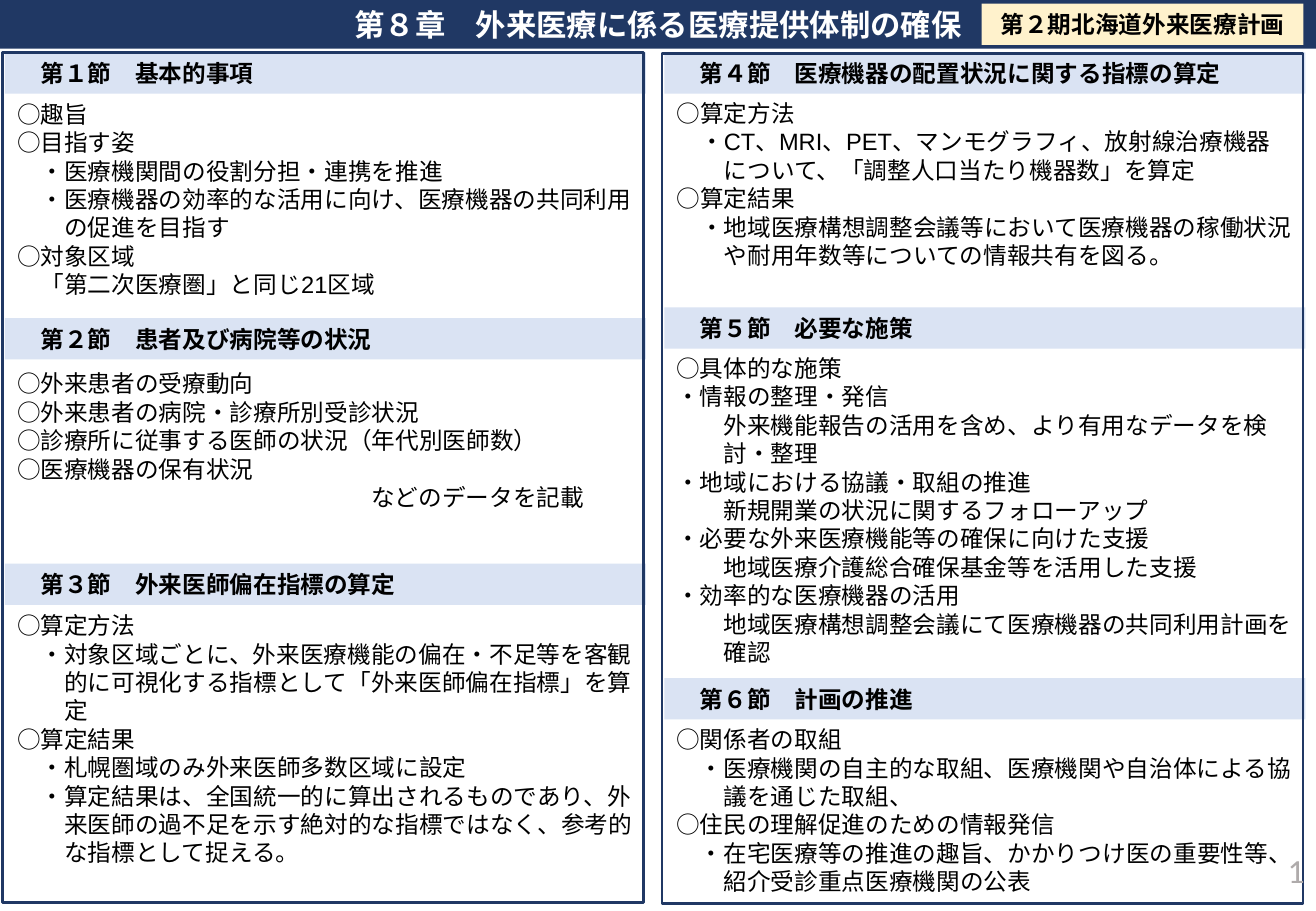
from dataclasses import dataclass

from lxml import etree
from pptx import Presentation
from pptx.dml.color import RGBColor
from pptx.enum.shapes import MSO_SHAPE
from pptx.enum.text import MSO_ANCHOR, MSO_AUTO_SIZE, PP_ALIGN
from pptx.oxml.ns import qn
from pptx.util import Pt

RECTANGLE = MSO_SHAPE.RECTANGLE
TOP, MIDDLE = MSO_ANCHOR.TOP, MSO_ANCHOR.MIDDLE
LEFT, CENTER, RIGHT = PP_ALIGN.LEFT, PP_ALIGN.CENTER, PP_ALIGN.RIGHT
NO_AUTOFIT = MSO_AUTO_SIZE.NONE
COMPARISON_LAYOUT = 4


@dataclass(frozen=True)
class Theme:
    navy: RGBColor = RGBColor(0x20, 0x38, 0x64)
    pale_blue: RGBColor = RGBColor(0xDA, 0xE3, 0xF3)
    cream: RGBColor = RGBColor(0xFF, 0xF2, 0xCC)
    white: RGBColor = RGBColor(0xFF, 0xFF, 0xFF)
    black: RGBColor = RGBColor(0, 0, 0)
    gray: RGBColor = RGBColor(0xAF, 0xAB, 0xAB)
    fonts: tuple = ("Calibri", "Arial")
    title_size: int = 18
    body_size: int = 14
    number_size: int = 20
    line_spacing: float = 16.85


THEME = Theme()
EM = THEME.body_size
COLUMN_WIDTH = 380
HEADING_HEIGHT = 24.5

# Each section: heading, heading top, list top, list height, lines.
# Each line: indent in characters, text; "|" switches between the two fonts.
COLUMNS = [
    (2.9, 1.4, 31, [
        ("第１節　基本的事項", 31, 55.4, 126, [
            (0, "|○趣旨"),
            (0, "|○目指す姿"),
            (1, "|・医療機関間の役割分担・連携を推進"),
            (1, "|・医療機器の効率的な活用に向け、医療機器の共同利用"),
            (2, "|の促進を目指す"),
            (0, "○対象区域"),
            (1, "「第二次医療圏」と同じ|21|区域"),
        ]),
        ("第２節　患者及び病院等の状況", 188.6, 215.3, 109, [
            (0, "○外来患者の受療動向"),
            (0, "○外来患者の病院・診療所別受診状況"),
            (0, "○診療所に従事する医師の状況（年代別医師数）"),
            (0, "○医療機器の保有状況"),
            (15, "などのデータを記載"),
        ]),
        ("第３節　外来医師偏在指標の算定", 334.1, 358.6, 177, [
            (0, "○算定方法"),
            (1, "・対象区域ごとに、外来医療機能の偏在・不足等を客観"),
            (2, "的に可視化する指標として「外来医師偏在指標」を算"),
            (2, "定"),
            (0, "○算定結果"),
            (1, "・札幌圏域のみ外来医師多数区域に設定"),
            (1, "・算定結果は、全国統一的に算出されるものであり、外"),
            (2, "来医師の過不足を示す絶対的な指標ではなく、参考的"),
            (2, "な指標として捉える。"),
        ]),
    ]),
    (393.8, 392.4, 31.7, [
        ("第４節　医療機器の配置状況に関する指標の算定", 31, 55, 124, [
            (0, "○算定方法"),
            (1, "|・CT、MRI、PET、|マンモグラフィ、放射線治療機器"),
            (2, "について、「調整人口当たり機器数」を算定"),
            (0, "○算定結果"),
            (1, "・地域医療構想調整会議等において医療機器の稼働状況"),
            (2, "や耐用年数等についての情報共有を図る。"),
        ]),
        ("第５節　必要な施策", 182.2, 206.2, 194, [
            (0, "○具体的な施策"),
            (0, "・情報の整理・発信"),
            (2, "外来機能報告の活用を含め、より有用なデータを検"),
            (2, "討・整理"),
            (0, "・地域における協議・取組の推進"),
            (2, "新規開業の状況に関するフォローアップ"),
            (0, "・必要な外来医療機能等の確保に向けた支援"),
            (2, "地域医療介護総合確保基金等を活用した支援"),
            (0, "・効率的な医療機器の活用"),
            (2, "地域医療構想調整会議にて医療機器の共同利用計画を"),
            (2, "確認"),
        ]),
        ("第６節　計画の推進", 402, 426.2, 109, [
            (0, "○関係者の取組"),
            (1, "・医療機関の自主的な取組、医療機関や自治体による協"),
            (2, "議を通じた取組、"),
            (0, "○住民の理解促進のための情報発信"),
            (1, "・在宅医療等の推進の趣旨、かかりつけ医の重要性等、"),
            (2, "紹介受診重点医療機関の公表"),
        ]),
    ]),
]


def place(shape, left, top, width, height, fill=None):
    """Set the shape's bounds and fill, without outline or shadow."""
    shape.left, shape.top = Pt(left), Pt(top)
    shape.width, shape.height = Pt(width), Pt(height)
    if fill is None:
        shape.fill.background()
    else:
        shape.fill.solid()
        shape.fill.fore_color.rgb = fill
    shape.line.fill.background()
    shape.shadow.inherit = False


def write(shape, lines, size=THEME.body_size, color=THEME.black, bold=False,
          align=LEFT, anchor=MIDDLE, spacing=1.0):
    """Fill the shape with (indent, text) lines, one paragraph each."""
    frame = shape.text_frame
    frame.word_wrap = True
    frame.auto_size = NO_AUTOFIT
    frame.vertical_anchor = anchor
    frame.margin_top = frame.margin_bottom = Pt(3.6 if anchor == TOP else 0)
    if align == LEFT:
        frame.margin_right = Pt(0)
    for index, (indent, text) in enumerate(lines):
        paragraph = frame.add_paragraph() if index else frame.paragraphs[0]
        paragraph.alignment = align
        paragraph.line_spacing = spacing
        paragraph.space_before = paragraph.space_after = Pt(0)
        properties = paragraph._p.get_or_add_pPr()
        properties.set("marL", str(Pt(indent * EM)))
        properties.set("indent", "0")
        etree.SubElement(properties, qn("a:buNone"))
        for part, segment in enumerate(text.split("|")):
            if segment:
                run = paragraph.add_run()
                run.text = segment
                run.font.name = THEME.fonts[part % 2]
                run.font.size = Pt(size)
                run.font.bold = bold
                run.font.color.rgb = color


presentation = Presentation()
presentation.slide_width, presentation.slide_height = Pt(780), Pt(540)
slide = presentation.slides.add_slide(
    presentation.slide_layouts[COMPARISON_LAYOUT])
shapes = slide.shapes

title = shapes.title
place(title, 0, 0, 780, 28.8, THEME.navy)
write(title, [(0, "第８章　外来医療に係る医療提供体制の確保")],
      THEME.title_size, THEME.white, bold=True, align=CENTER)

# The layout offers four body placeholders; further lists use text boxes.
list_placeholders = [shape for shape in slide.placeholders if shape != title]
for left, frame_left, frame_top, sections in COLUMNS:
    for heading, heading_top, list_top, list_height, lines in sections:
        band = shapes.add_shape(RECTANGLE, 0, 0, 0, 0)
        place(band, left, heading_top, COLUMN_WIDTH, HEADING_HEIGHT,
              THEME.pale_blue)
        write(band, [(1, heading)], bold=True)

        if list_placeholders:
            section_list = list_placeholders.pop(0)
        else:
            section_list = shapes.add_textbox(0, 0, 0, 0)
        place(section_list, left, list_top, COLUMN_WIDTH, list_height)
        write(section_list, lines, anchor=TOP, spacing=Pt(THEME.line_spacing))

    column_frame = shapes.add_shape(RECTANGLE, 0, 0, 0, 0)
    place(column_frame, frame_left, frame_top, COLUMN_WIDTH, 504)
    column_frame.line.color.rgb = THEME.navy
    column_frame.line.width = Pt(1.5)

plan_label = shapes.add_shape(RECTANGLE, 0, 0, 0, 0)
place(plan_label, 581.8, 2.2, 190.8, HEADING_HEIGHT, THEME.cream)
write(plan_label, [(0, "第２期北海道外来医療計画")], bold=True, align=CENTER)

page_number = shapes.add_textbox(0, 0, 0, 0)
place(page_number, 604.8, 501.1, 175.7, 28.8)
write(page_number, [(0, "1")], THEME.number_size, THEME.gray, align=RIGHT)

presentation.save("out.pptx")
